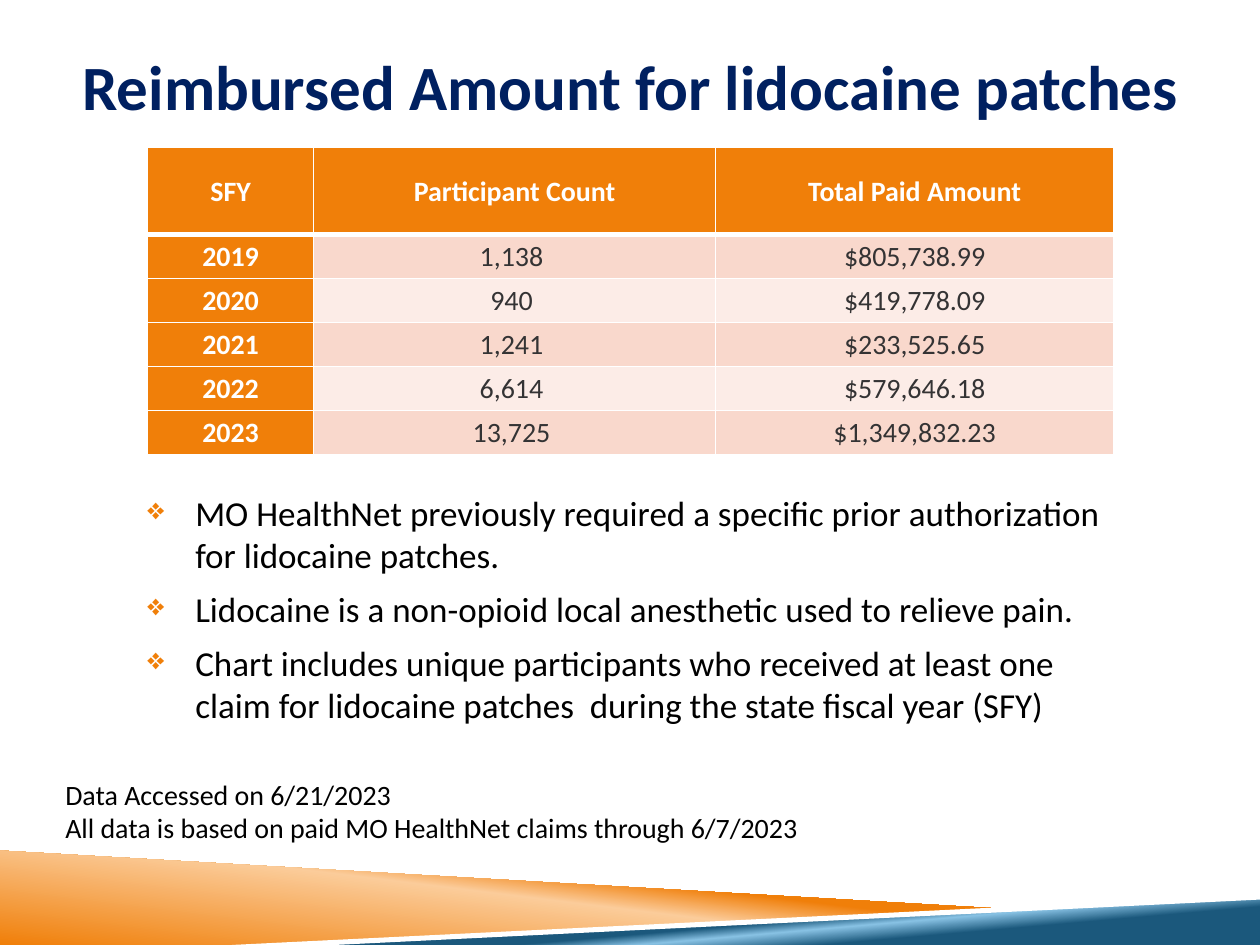
"""Build the slide on reimbursed amounts for lidocaine patches."""
from dataclasses import dataclass
from typing import NamedTuple

from lxml import etree
from pptx import Presentation
from pptx.dml.color import RGBColor
from pptx.enum.text import MSO_ANCHOR, PP_ALIGN
from pptx.oxml.ns import qn
from pptx.util import Inches, Pt

LEFT, CENTER = PP_ALIGN.LEFT, PP_ALIGN.CENTER
TOP, MIDDLE = MSO_ANCHOR.TOP, MSO_ANCHOR.MIDDLE


@dataclass(frozen=True)
class Theme:
    font: str = "Calibri"
    navy: str = "002060"
    orange: str = "F07F09"
    peach: str = "FBCC9A"
    blue: str = "1B587C"
    sky: str = "89C3E5"
    white: str = "FFFFFF"
    black: str = "000000"
    gray: str = "343334"
    bands: tuple[str, str] = ("F9D8CC", "FCECE7")
    title_size: int = 36
    body_size: int = 20
    small_size: int = 16


class Area(NamedTuple):
    left: float
    top: float
    width: float
    height: float


class Stop(NamedTuple):
    percent: int
    color: str


class Wedge(NamedTuple):
    points: list[tuple[float, float]]
    stops: list[Stop]
    angle: int = 0


THEME = Theme()
WEDGES = [
    Wedge([(0, 6.75), (7.92, 7.21), (2, 7.5), (0, 7.5)],
          [Stop(0, THEME.orange), Stop(52, THEME.peach), Stop(66, THEME.orange)], 277),
    Wedge([(1.98, 7.5), (10, 7.12), (10, 7.5)],
          [Stop(28, THEME.blue), Stop(40, THEME.sky), Stop(48, THEME.blue)], 265),
    Wedge([(10, 7.1), (1.84, 7.5), (2.66, 7.5), (10, 7.14)], [Stop(0, THEME.white)]),
]
HEADER = ("SFY", "Participant Count", "Total Paid Amount")
RECORDS = [
    ("2019", "1,138 ", "$805,738.99"),
    ("2020", "940 ", "$419,778.09"),
    ("2021", "1,241 ", "$233,525.65"),
    ("2022", "6,614 ", "$579,646.18"),
    ("2023", "13,725 ", "$1,349,832.23"),
]
COLUMN_WIDTHS = (1.32, 3.19, 3.16)
HEADER_HEIGHT, ROW_HEIGHT = 0.69, 0.35
BULLETS = [
    "MO HealthNet previously required a specific prior authorization for lidocaine patches.",
    "Lidocaine is a non-opioid local anesthetic used to relieve pain.",
    "Chart includes unique participants who received at least one claim for "
    "lidocaine patches  during the state fiscal year (SFY)",
]
NOTES = [
    "Data Accessed on 6/21/2023",
    "All data is based on paid MO HealthNet claims through 6/7/2023",
]


def add_color(parent, color: str) -> None:
    etree.SubElement(parent, qn("a:srgbClr"), val=color)


def add_bullet(para) -> None:
    properties = para._p.get_or_add_pPr()
    properties.set("marL", str(Inches(0.38)))
    properties.set("indent", str(Inches(-0.38)))
    add_color(etree.SubElement(properties, qn("a:buClr")), THEME.orange)
    etree.SubElement(properties, qn("a:buSzPct"), val="85000")
    etree.SubElement(properties, qn("a:buChar"), char="❖")


def write_text(frame, lines: list[str], *, size: int, color: str, bold: bool = False,
               align: PP_ALIGN = LEFT, bullets: bool = False, gap: int = 0) -> None:
    for index, line in enumerate(lines):
        para = frame.paragraphs[0] if index == 0 else frame.add_paragraph()
        if bullets:
            add_bullet(para)
        para.alignment = align
        if index and gap:
            para.space_before = Pt(gap)
        span = para.add_run()
        span.text = line
        span.font.name = THEME.font
        span.font.size = Pt(size)
        span.font.bold = bold
        span.font.color.rgb = RGBColor.from_string(color)


def add_text(page, area: Area, lines: list[str], *, anchor: MSO_ANCHOR = TOP,
             side_inset: float = 0, wrap: bool = True, **style) -> None:
    box = page.shapes.add_textbox(*map(Inches, area))
    frame = box.text_frame
    frame.word_wrap = wrap
    frame.vertical_anchor = anchor
    frame.margin_left = frame.margin_right = Inches(side_inset)
    write_text(frame, lines, **style)


def fill_gradient(shape, stops: list[Stop], angle: int) -> None:
    shape.fill.gradient()
    gradient = shape._element.spPr.find(qn("a:gradFill"))
    for child in list(gradient):
        gradient.remove(child)
    stop_list = etree.SubElement(gradient, qn("a:gsLst"))
    for stop in stops:
        add_color(etree.SubElement(stop_list, qn("a:gs"), pos=str(stop.percent * 1000)), stop.color)
    etree.SubElement(gradient, qn("a:lin"), ang=str(angle * 60000), scaled="0")


def add_wedge(page, wedge: Wedge) -> None:
    points = [(Inches(x), Inches(y)) for x, y in wedge.points]
    builder = page.shapes.build_freeform(*points[0])
    builder.add_line_segments(points[1:], close=True)
    shape = builder.convert_to_shape()
    shape.shadow.inherit = False
    shape.line.fill.background()
    if len(wedge.stops) > 1:
        fill_gradient(shape, wedge.stops, wedge.angle)
    else:
        shape.fill.solid()
        shape.fill.fore_color.rgb = RGBColor.from_string(wedge.stops[0].color)


def add_borders(cell, **widths: int) -> None:
    properties = cell._tc.get_or_add_tcPr()
    for side in ("L", "R", "T", "B"):
        line = etree.SubElement(properties, qn(f"a:ln{side}"), w=str(Pt(widths.get(side, 1))))
        add_color(etree.SubElement(line, qn("a:solidFill")), THEME.white)


def add_data_table(page, area: Area) -> None:
    rows = [HEADER, *RECORDS]
    table = page.shapes.add_table(len(rows), len(HEADER), *map(Inches, area)).table
    for column, width in zip(table.columns, COLUMN_WIDTHS):
        column.width = Inches(width)
    for row_index, values in enumerate(rows):
        table.rows[row_index].height = Inches(ROW_HEIGHT if row_index else HEADER_HEIGHT)
        thick = {0: {"B": 3}, 1: {"T": 3}}.get(row_index, {})
        for column_index, value in enumerate(values):
            cell = table.cell(row_index, column_index)
            heading = row_index == 0 or column_index == 0
            add_borders(cell, **thick)
            cell.fill.solid()
            fill = THEME.orange if heading else THEME.bands[(row_index - 1) % 2]
            cell.fill.fore_color.rgb = RGBColor.from_string(fill)
            cell.vertical_anchor = MIDDLE
            cell.margin_left = cell.margin_right = cell.margin_top = Inches(0.01)
            cell.margin_bottom = 0
            write_text(cell.text_frame, [value], size=THEME.small_size, bold=heading,
                       color=THEME.white if heading else THEME.gray, align=CENTER)


def main() -> None:
    deck = Presentation()
    deck.slide_width, deck.slide_height = Inches(10), Inches(7.5)
    page = deck.slides.add_slide(deck.slide_layouts[6])
    for wedge in WEDGES:
        add_wedge(page, wedge)
    add_text(page, Area(0.64, 0.2, 8.73, 0.96), ["Reimbursed Amount for lidocaine patches"],
             anchor=MIDDLE, size=THEME.title_size, color=THEME.navy, bold=True, align=CENTER)
    add_data_table(page, Area(1.17, 1.17, 7.67, 2.44))
    add_text(page, Area(0.42, 6.12, 6.08, 0.64), NOTES, side_inset=0.1, wrap=False,
             size=THEME.small_size, color=THEME.black)
    add_text(page, Area(1.17, 3.85, 7.67, 2), BULLETS, size=THEME.body_size,
             color=THEME.black, bullets=True, gap=7)
    deck.save("out.pptx")


if __name__ == "__main__":
    main()
